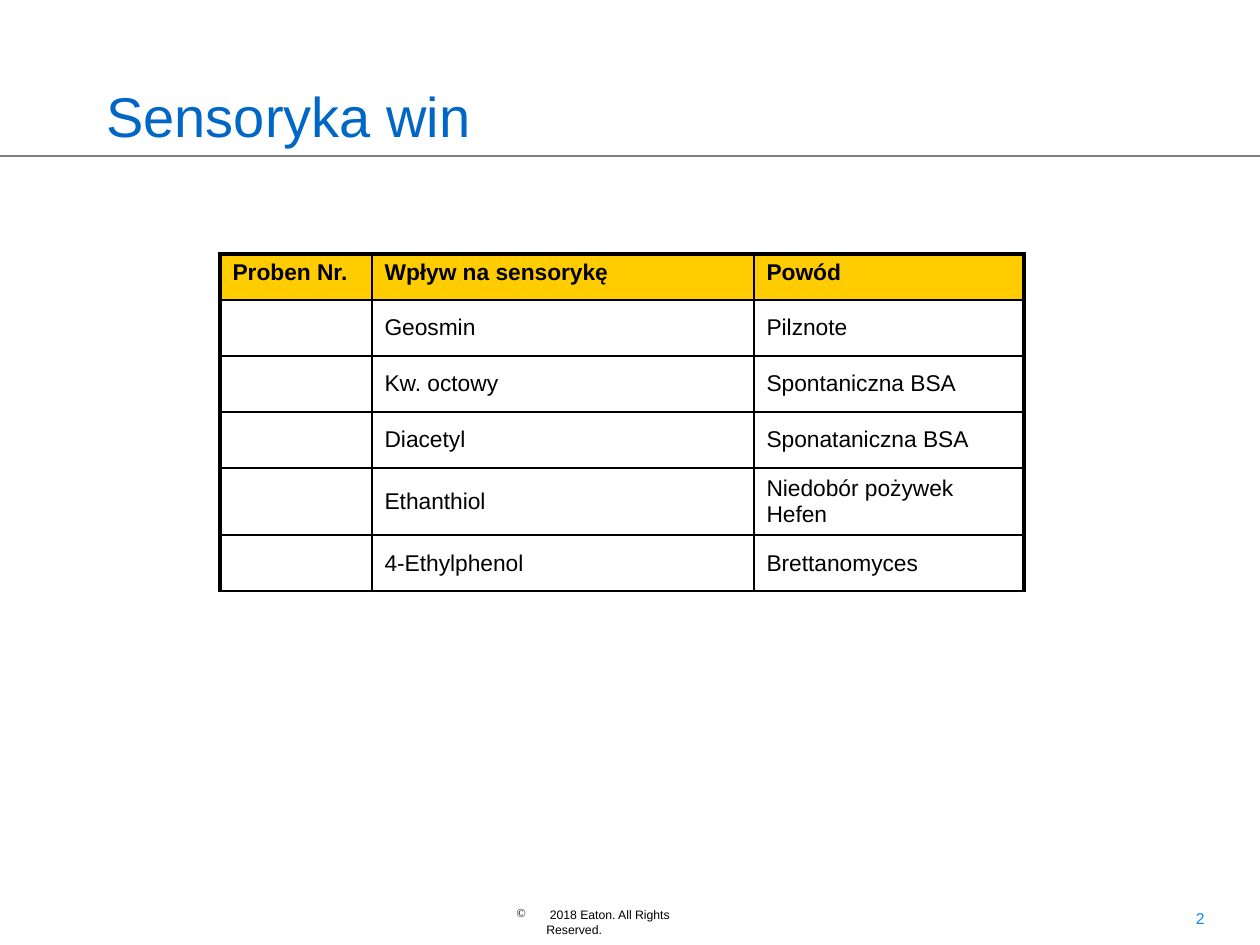
"""Build the wine sensory slide with its table of faults and causes."""
from lxml import etree
from pptx import Presentation
from pptx.dml.color import RGBColor
from pptx.enum.shapes import MSO_CONNECTOR
from pptx.enum.text import MSO_ANCHOR, PP_ALIGN
from pptx.oxml.ns import qn
from pptx.util import Pt

PX = 914400 // 126
STRAIGHT = MSO_CONNECTOR.STRAIGHT
TOP, MIDDLE, BOTTOM = MSO_ANCHOR.TOP, MSO_ANCHOR.MIDDLE, MSO_ANCHOR.BOTTOM
LEFT, RIGHT = PP_ALIGN.LEFT, PP_ALIGN.RIGHT
BLACK = RGBColor(0, 0, 0)
GRAY = RGBColor(0x80, 0x80, 0x80)
BLUE = RGBColor(0x00, 0x67, 0xC6)
SKY = RGBColor(0x0C, 0x86, 0xF4)
GOLD = RGBColor(0xFF, 0xCC, 0x00)

TITLE = "Sensoryka win"
NOTICE = " 2018 Eaton. All Rights Reserved."
NUMBER = "2"
ROWS = [
    ("Proben Nr.", "Wpływ na sensorykę", "Powód"),
    ("", "Geosmin", "Pilznote"),
    ("", "Kw. octowy", "Spontaniczna BSA"),
    ("", "Diacetyl", "Sponataniczna BSA"),
    ("", "Ethanthiol", "Niedobór pożywek Hefen"),
    ("", "4-Ethylphenol", "Brettanomyces"),
]
WIDTHS = (152, 382, 270)
HEAD, BODY = 46, 56
THIN, THICK = 1, 2.25


def style(para, size, color, bold=False):
    font = para.font
    font.name, font.size, font.bold = "Arial", Pt(size), bold
    font.color.rgb = color


def write(slide, box, text, size, color, anchor=TOP, align=LEFT):
    shape = slide.shapes.add_textbox(*(n * PX for n in box))
    frame = shape.text_frame
    frame.word_wrap, frame.vertical_anchor = True, anchor
    para = frame.paragraphs[0]
    para.text, para.alignment = text, align
    style(para, size, color)
    return para


def bullet(para, char, indent):
    props = para._p.get_or_add_pPr()
    props.set("marL", str(indent * PX))
    props.set("indent", str(-indent * PX))
    mark = etree.Element(qn("a:buChar"), char=char)
    props.insert(0, mark)


def border(cell, side, width):
    props = cell._tc.get_or_add_tcPr()
    line = etree.SubElement(props, qn("a:ln" + side), w=str(Pt(width)))
    fill = etree.SubElement(line, qn("a:solidFill"))
    etree.SubElement(fill, qn("a:srgbClr"), val=str(BLACK))


def rule(slide, y):
    line = slide.shapes.add_connector(STRAIGHT, 0, y * PX, 1260 * PX, y * PX)
    line.line.color.rgb, line.line.width = GRAY, Pt(1.5)
    etree.SubElement(line._element.spPr, qn("a:effectLst"))


def grid(slide, x, y):
    count, last = len(ROWS), len(WIDTHS) - 1
    high = HEAD + BODY * (count - 1)
    table = slide.shapes.add_table(
        count, last + 1, x * PX, y * PX, sum(WIDTHS) * PX, high * PX).table
    table.first_row = table.horz_banding = False
    for col, width in zip(table.columns, WIDTHS):
        col.width = width * PX
    for r, texts in enumerate(ROWS):
        table.rows[r].height = (BODY if r else HEAD) * PX
        for c, text in enumerate(texts):
            cell = table.cell(r, c)
            cell.vertical_anchor = MIDDLE if r else TOP
            edges = {"L": c == 0, "R": c == last, "T": r == 0, "B": False}
            for side, outer in edges.items():
                border(cell, side, THICK if outer else THIN)
            if r:
                cell.fill.background()
            else:
                cell.fill.solid()
                cell.fill.fore_color.rgb = GOLD
            para = cell.text_frame.paragraphs[0]
            para.text = text
            style(para, 13, BLACK, r == 0)


def main():
    deck = Presentation()
    deck.slide_width, deck.slide_height = 1260 * PX, 945 * PX
    slide = deck.slides.add_slide(deck.slide_layouts[6])
    rule(slide, 156)
    write(slide, (924, 903, 293, 66), NUMBER, 9, SKY, align=RIGHT)
    notice = write(slide, (504, 901, 220, 28), NOTICE, 7, BLACK)
    bullet(notice, "©", 30)
    title = write(slide, (94, 55, 958, 101), TITLE, 32, BLUE, BOTTOM)
    title.line_spacing = 0.9
    grid(slide, 220, 254)
    deck.save("out.pptx")


if __name__ == "__main__":
    main()
